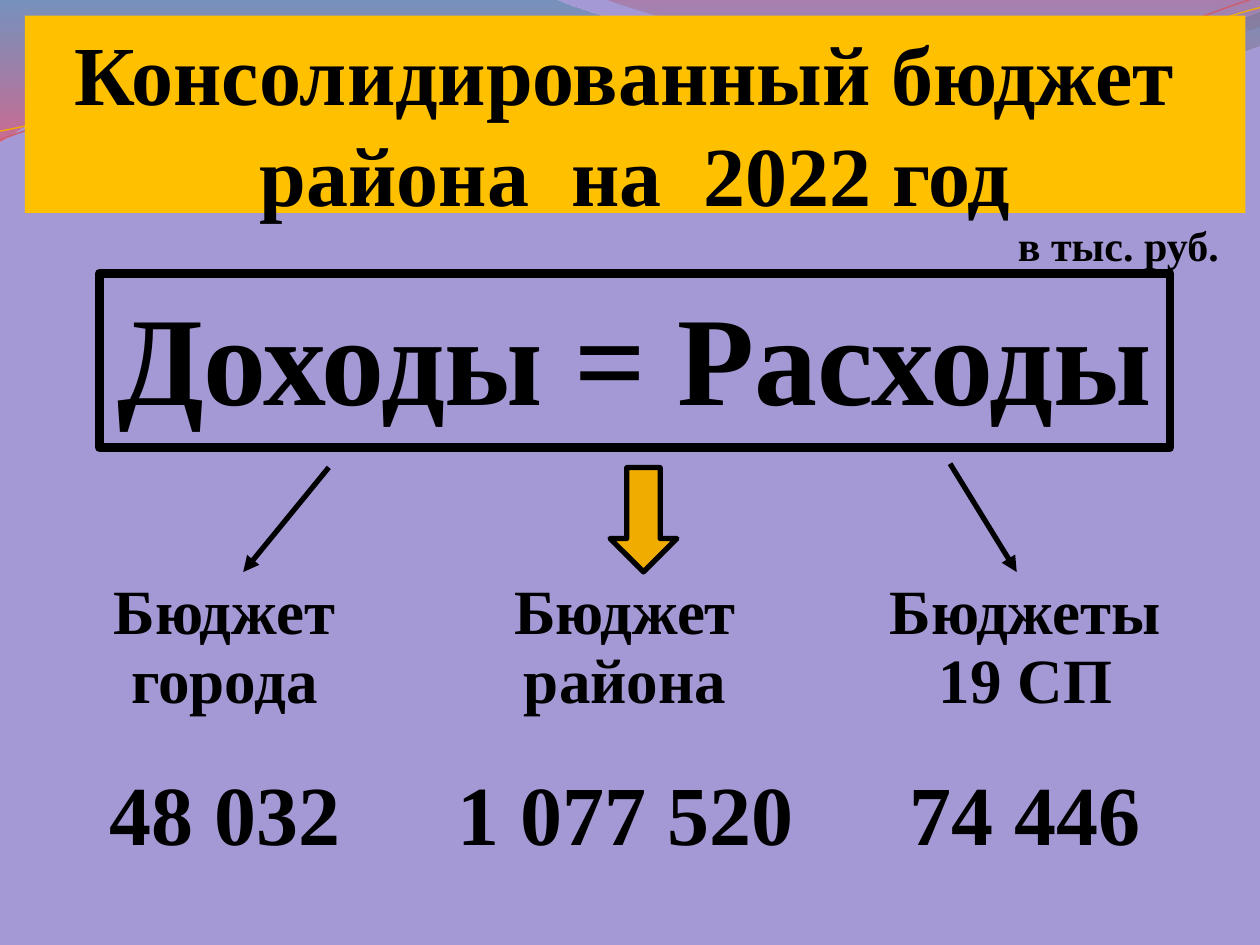
"""Build the slide on the district's consolidated budget for 2022."""
from lxml.etree import SubElement
from pptx import Presentation
from pptx.dml.color import RGBColor
from pptx.enum.shapes import MSO_CONNECTOR, MSO_SHAPE
from pptx.enum.text import MSO_ANCHOR, PP_ALIGN
from pptx.oxml.ns import qn
from pptx.util import Pt


def rgb(color):
    return RGBColor.from_string(color)


def write(tf, lines, align=PP_ALIGN.CENTER):
    tf.vertical_anchor = MSO_ANCHOR.TOP
    for i, (text, size, before) in enumerate(lines):
        p = tf.paragraphs[0] if i == 0 else tf.add_paragraph()
        p.text = text
        p.alignment = align
        p.space_before = Pt(before)
        p.font.name = "Times New Roman"
        p.font.size = Pt(size)
        p.font.bold = True
        p.font.color.rgb = rgb("000000")


prs = Presentation()
prs.slide_width, prs.slide_height = Pt(720), Pt(540)
s = prs.slides.add_slide(prs.slide_layouts[6])
s.background.fill.solid()
s.background.fill.fore_color.rgb = rgb("A499D5")

waves = [
    ([(0, 0), (316.8, -0.7), (342.7, 12.2, 478, 45.4, 545.8, 45.4),
      (614.2, 45.4, 689.8, 18.7, 720, 6.5), (720.7, 25.9),
      (707.8, 31.7, 626.4, 54.7, 537, 54), (447.8, 54, 275, 20.2, 185, 24.5),
      (92.9, 25.9, 33, 59.8, -0.7, 81.4)],
     [(0, "3F8A9F", 45), (1, "EF445B", 55)], None),
    ([(344.9, -0.7), (366.5, 7.9, 491, 44.6, 553.7, 46.8),
      (616.3, 49.7, 691.9, 23, 720, 15.1), (720, 0)],
     [(0, "B84253", 30), (0.8, "42ABC7", 45)], None),
    ([(0, 79.9), (34.6, 67, 113.8, 41, 199.4, 37.4),
      (284.4, 33.8, 427, 64, 513.4, 57.6), (599.8, 51, 675.4, 10.8, 718.6, -1.4)],
     None, ("CB5F6E", 0.85)),
    ([(0, 74.9), (33.8, 69, 118, 43.9, 203.8, 40.3),
      (290.2, 36.7, 429.8, 60.5, 516.2, 54), (602, 48.2, 677.5, 15.1, 720, 4.3)],
     None, ("F0AD00", 0.75)),
]
for path, stops, line in waves:
    pts = [(Pt(x), Pt(y)) for seg in path for x, y in zip(seg[::2], seg[1::2])]
    fb = s.shapes.build_freeform(*pts[0], scale=1.0)
    fb.add_line_segments(pts[1:], close=stops is not None)
    sp = fb.convert_to_shape()
    sp.shadow.inherit = False
    nodes = iter(list(sp._element.iter(qn("a:lnTo"))))
    for seg in path[1:]:
        node = next(nodes)
        if len(seg) == 6:
            node.tag = qn("a:cubicBezTo")
            for extra in (next(nodes), next(nodes)):
                node.append(extra[0])
                extra.getparent().remove(extra)
    if stops:
        sp.line.fill.background()
        sp.fill.gradient()
        sp.fill.gradient_angle = 270
        for stop, (pos, color, alpha) in zip(sp.fill.gradient_stops, stops):
            stop.position = pos
            stop.color.rgb = rgb(color)
        for clr, (pos, color, alpha) in zip(sp._element.spPr.iter(qn("a:srgbClr")), stops):
            SubElement(clr, qn("a:alpha")).set("val", str(alpha * 1000))
    else:
        sp.fill.background()
        sp.line.color.rgb = rgb(line[0])
        sp.line.width = Pt(line[1])

boxes = [
    (MSO_SHAPE.RECTANGLE, 14.2, 9, 697.4, 112.7, "FFC000", 0),
    (MSO_SHAPE.RECTANGLE, 56.7, 156.2, 612, 99.4, None, 5),
    (MSO_SHAPE.DOWN_ARROW, 348.6, 267.2, 38.2, 59.6, "F0AD00", 3),
]
shapes = []
for kind, x, y, w, h, fill, width in boxes:
    sp = s.shapes.add_shape(kind, Pt(x), Pt(y), Pt(w), Pt(h))
    sp.shadow.inherit = False
    if fill:
        sp.fill.solid()
        sp.fill.fore_color.rgb = rgb(fill)
    else:
        sp.fill.background()
    if width:
        sp.line.color.rgb = rgb("000000")
        sp.line.width = Pt(width)
    else:
        sp.line.fill.background()
    shapes.append(sp)
title, balance, arrow = shapes

write(title.text_frame, [("Консолидированный бюджет ", 48, 0), ("района  на  2022 год", 48, 0)])
balance.text_frame.word_wrap = False
write(balance.text_frame, [("Доходы = Расходы", 72, 0)])

tf = s.shapes.add_textbox(Pt(574.6), Pt(121.7), Pt(136), Pt(28)).text_frame
tf.word_wrap = True
write(tf, [("в тыс. руб.", 24, 0)], PP_ALIGN.LEFT)

columns = [
    [("Бюджет города", 36, 0), ("48 032", 48, 30.6)],
    [("Бюджет района", 36, 0), ("1 077 520", 48, 30.6)],
    [("Бюджеты", 36, 0), ("19 СП", 36, 0), ("74 446", 48, 30.6)],
]
tbl = s.shapes.add_table(1, 3, Pt(14), Pt(326.8), Pt(686.4), Pt(213)).table
tbl.first_row = tbl.horz_banding = False
tbl._tbl.tblPr.find(qn("a:tableStyleId")).text = "{2D5ABB26-0587-4C30-8999-92F81FD0307C}"
for cell, lines in zip(tbl.rows[0].cells, columns):
    cell.fill.background()
    write(cell.text_frame, lines)

for x1, y1, x2, y2 in [(542.9, 265, 581, 326.9), (187.9, 267.1, 139, 326.9)]:
    cn = s.shapes.add_connector(MSO_CONNECTOR.STRAIGHT, Pt(x1), Pt(y1), Pt(x2), Pt(y2))
    cn.line.color.rgb = rgb("000000")
    cn.line.width = Pt(3)
    SubElement(cn.line._get_or_add_ln(), qn("a:tailEnd")).set("type", "triangle")
    SubElement(cn._element.spPr, qn("a:effectLst"))

prs.save("out.pptx")
